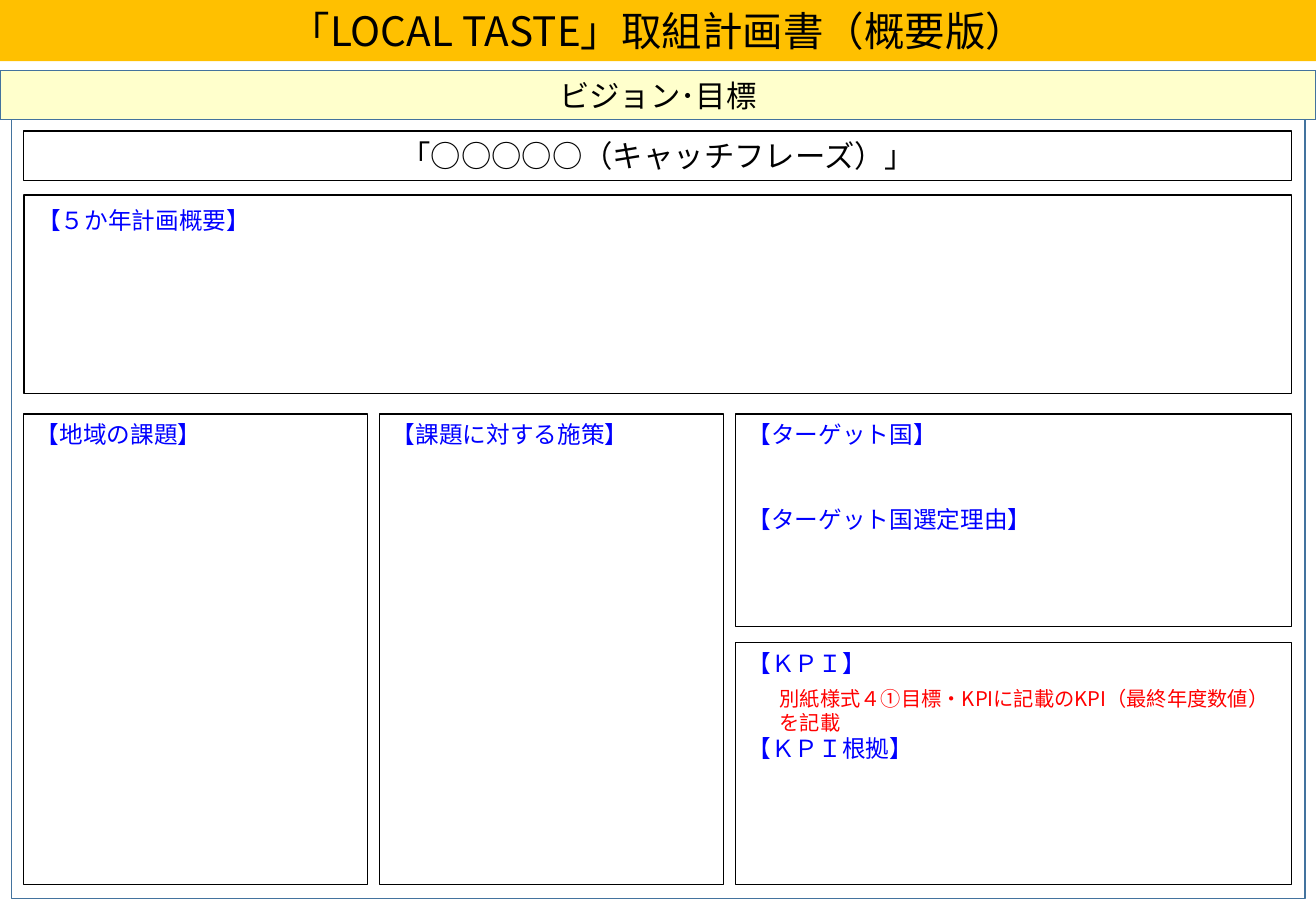
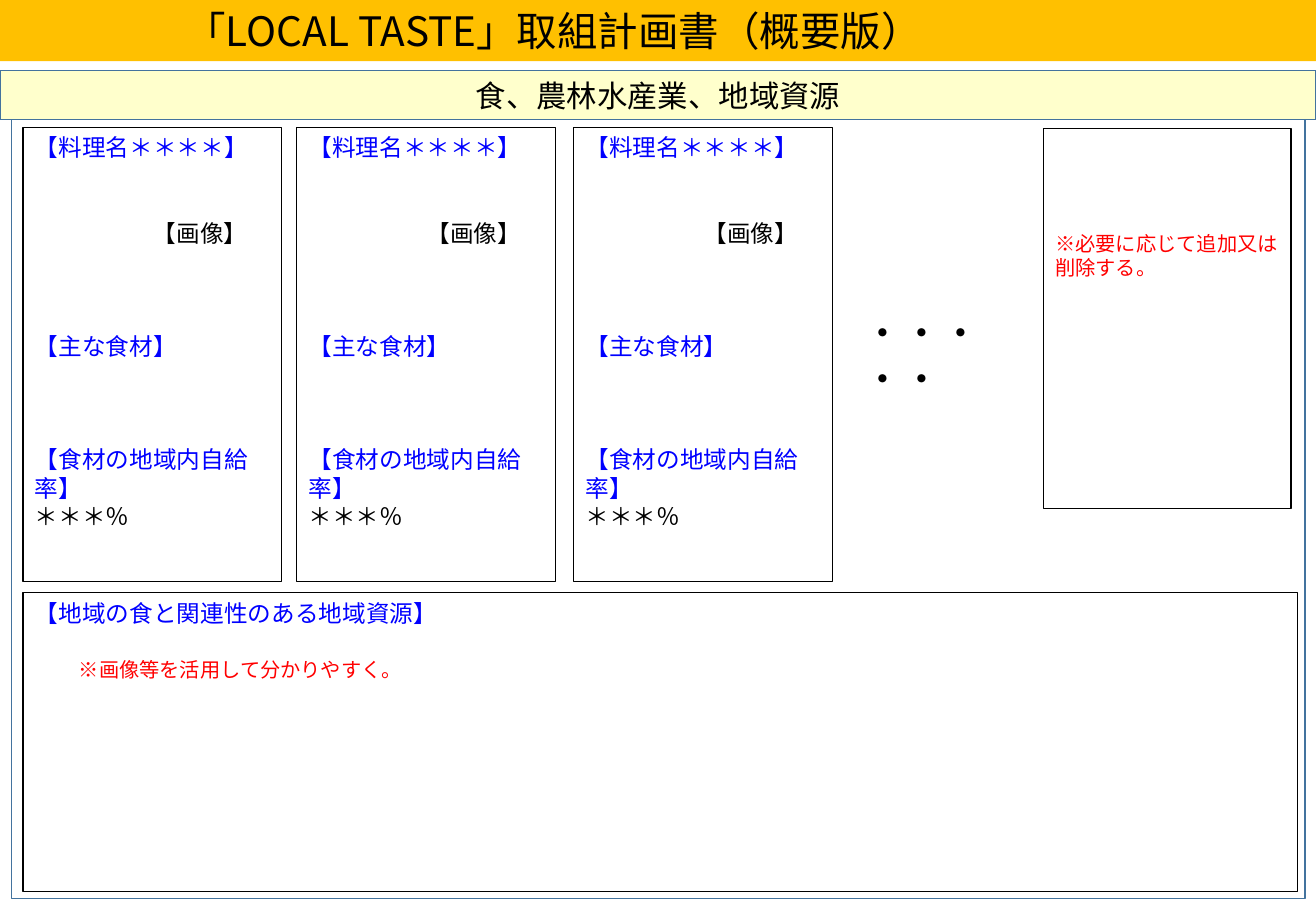
from dataclasses import dataclass
from typing import Optional

from lxml.etree import SubElement
from pptx import Presentation
from pptx.dml.color import RGBColor
from pptx.enum.shapes import MSO_SHAPE as Preset
from pptx.enum.text import MSO_ANCHOR as Anchor, MSO_AUTO_SIZE as AutoSize, PP_ALIGN as Align
from pptx.oxml.ns import qn
from pptx.util import Cm, Pt

BLACK = RGBColor(0x00, 0x00, 0x00)
WHITE = RGBColor(0xFF, 0xFF, 0xFF)
BLUE = RGBColor(0x00, 0x00, 0xFF)
RED = RGBColor(0xFF, 0x00, 0x00)
STEEL = RGBColor(0x43, 0x73, 0x9E)
AMBER = RGBColor(0xFF, 0xC0, 0x00)
CREAM = RGBColor(0xFF, 0xFF, 0xCC)

FONT = "Noto Sans CJK JP"
LINE_RATIO = 1.2
WIDTH, HEIGHT = 27.51, 19.05
TITLE = "「LOCAL TASTE」取組計画書（概要版）"


@dataclass(frozen=True)
class Para:
    text: str
    size: float = 14
    color: RGBColor = BLUE
    before: float = 0  # blank lines above
    indent: float = 0  # full-width characters
    font: str = FONT


@dataclass(frozen=True)
class Area:
    """Left, top, width and height in centimetres."""
    left: float
    top: float
    width: float
    height: float

    def emu(self) -> tuple:
        return Cm(self.left), Cm(self.top), Cm(self.width), Cm(self.height)


@dataclass(frozen=True)
class Box:
    area: Area
    paras: tuple = ()
    fill: RGBColor = WHITE
    line: RGBColor = BLACK
    weight: float = 0.75
    centred: bool = False
    inset_top: float = 0.13


def style_font(paragraph, para: Para) -> None:
    font = paragraph.font
    font.name, font.size, font.color.rgb = para.font, Pt(para.size), para.color
    # East Asian typeface of each run
    for run in paragraph.runs:
        SubElement(run._r.get_or_add_rPr(), qn("a:ea")).set("typeface", para.font)


def write(frame, paras: tuple, centred: bool = False, inset_top: float = 0.13) -> None:
    frame.word_wrap = True
    frame.auto_size = AutoSize.NONE
    frame.vertical_anchor = Anchor.MIDDLE if centred else Anchor.TOP
    frame.margin_top = Cm(0 if centred else inset_top)
    frame.margin_bottom = Cm(0 if centred else 0.13)
    for number, para in enumerate(paras):
        paragraph = frame.add_paragraph() if number else frame.paragraphs[0]
        paragraph.text = para.text
        paragraph.alignment = Align.CENTER if centred else Align.LEFT
        if not centred:
            paragraph.line_spacing = Pt(para.size * LINE_RATIO)
        if para.before:
            paragraph.space_before = Pt(para.before * para.size * LINE_RATIO)
        if para.indent:
            paragraph._p.get_or_add_pPr().set("marL", str(Pt(para.indent * para.size)))
        style_font(paragraph, para)


def draw_box(slide, box: Box) -> None:
    shape = slide.shapes.add_shape(Preset.RECTANGLE, *box.area.emu())
    shape.shadow.inherit = False
    shape.fill.solid()
    shape.fill.fore_color.rgb = box.fill
    shape.line.color.rgb = box.line
    shape.line.width = Pt(box.weight)
    if box.paras:
        write(shape.text_frame, box.paras, box.centred, box.inset_top)


def draw_text(slide, area: Area, para: Para) -> None:
    write(slide.shapes.add_textbox(*area.emu()).text_frame, (para,))


def start_slide(deck, section: str, title_shift: Optional[float] = None):
    """Add a slide with its title band, outer frame and section band."""
    slide = deck.slides.add_slide(deck.slide_layouts[5])
    title = slide.shapes.title
    title.left, title.top, title.width, title.height = Area(0, 0, WIDTH, 1.28).emu()
    title.fill.solid()
    title.fill.fore_color.rgb = AMBER
    write(title.text_frame, (Para(TITLE, 24, BLACK),), centred=True)
    if title_shift:
        title.text_frame.margin_right = Cm(title_shift)
    draw_box(slide, Box(Area(0.24, 2.44, 27.04, 16.35), line=STEEL, weight=1))
    draw_box(slide, Box(Area(0, 1.47, WIDTH, 1.03), (Para(section, 18, BLACK),),
                        fill=CREAM, line=STEEL, centred=True))
    return slide


def build_vision(deck) -> None:
    slide = start_slide(deck, "ビジョン･目標")
    left, top, full_width, gap = 0.5, 8.66, 26.5, 0.26
    column, depth = 7.18, 9.83
    second = left + column + gap
    third = second + column + gap
    target_depth, kpi_depth = 4.45, 5.05
    wide = left + full_width - third

    boxes = (
        Box(Area(left, 2.74, full_width, 1.03),
            (Para("「○○○○○（キャッチフレーズ）」", 18, BLACK),), centred=True),
        Box(Area(left, 4.08, full_width, 4.15), weight=1),
        Box(Area(left, top, column, depth), (Para("【地域の課題】"),)),
        Box(Area(second, top, column, depth), (Para("【課題に対する施策】"),)),
        Box(Area(third, top, wide, target_depth),
            (Para("【ターゲット国】"), Para("【ターゲット国選定理由】", before=2))),
        Box(Area(third, top + depth - kpi_depth, wide, kpi_depth),
            (Para("【ＫＰＩ】"), Para("【ＫＰＩ根拠】", before=2))),
    )
    for box in boxes:
        draw_box(slide, box)
    draw_text(slide, Area(0.53, 4.17, 19.1, 0.87), Para("【５か年計画概要】"))
    draw_text(slide, Area(16.05, 14.22, 10.95, 1.28),
              Para("別紙様式４①目標・KPIに記載のKPI（最終年度数値）を記載", 12, RED))


def build_resources(deck) -> None:
    slide = start_slide(deck, "食、農林水産業、地域資源", title_shift=4.62)

    # Dish cards
    dish = (
        Para("【料理名＊＊＊＊】"),
        Para("【画像】", color=BLACK, before=2, indent=5),
        Para("【主な食材】", before=3),
        Para("【食材の地域内自給率】", before=3),
        Para("＊＊＊％", color=BLACK),
    )
    for left in (0.48, 6.2, 11.99):
        draw_box(slide, Box(Area(left, 2.66, 5.41, 9.5), dish))

    # Room for further dishes
    draw_text(slide, Area(17.81, 6.32, 3.71, 1.24),
              Para("・・・・・", 23, BLACK, font="Calibri"))
    draw_box(slide, Box(Area(21.81, 2.69, 5.18, 7.95),
                        (Para("※必要に応じて追加又は削除する。", 12, RED),), inset_top=2.15))

    # Regional resources
    draw_box(slide, Box(Area(0.48, 12.39, 26.65, 6.25), (
        Para("【地域の食と関連性のある地域資源】"),
        Para("※画像等を活用して分かりやすく。", 12, RED, before=1.25, indent=2.17),
    )))


def main() -> None:
    deck = Presentation()
    deck.slide_width, deck.slide_height = Cm(WIDTH), Cm(HEIGHT)
    build_vision(deck)
    build_resources(deck)
    deck.save("out.pptx")


if __name__ == "__main__":
    main()
